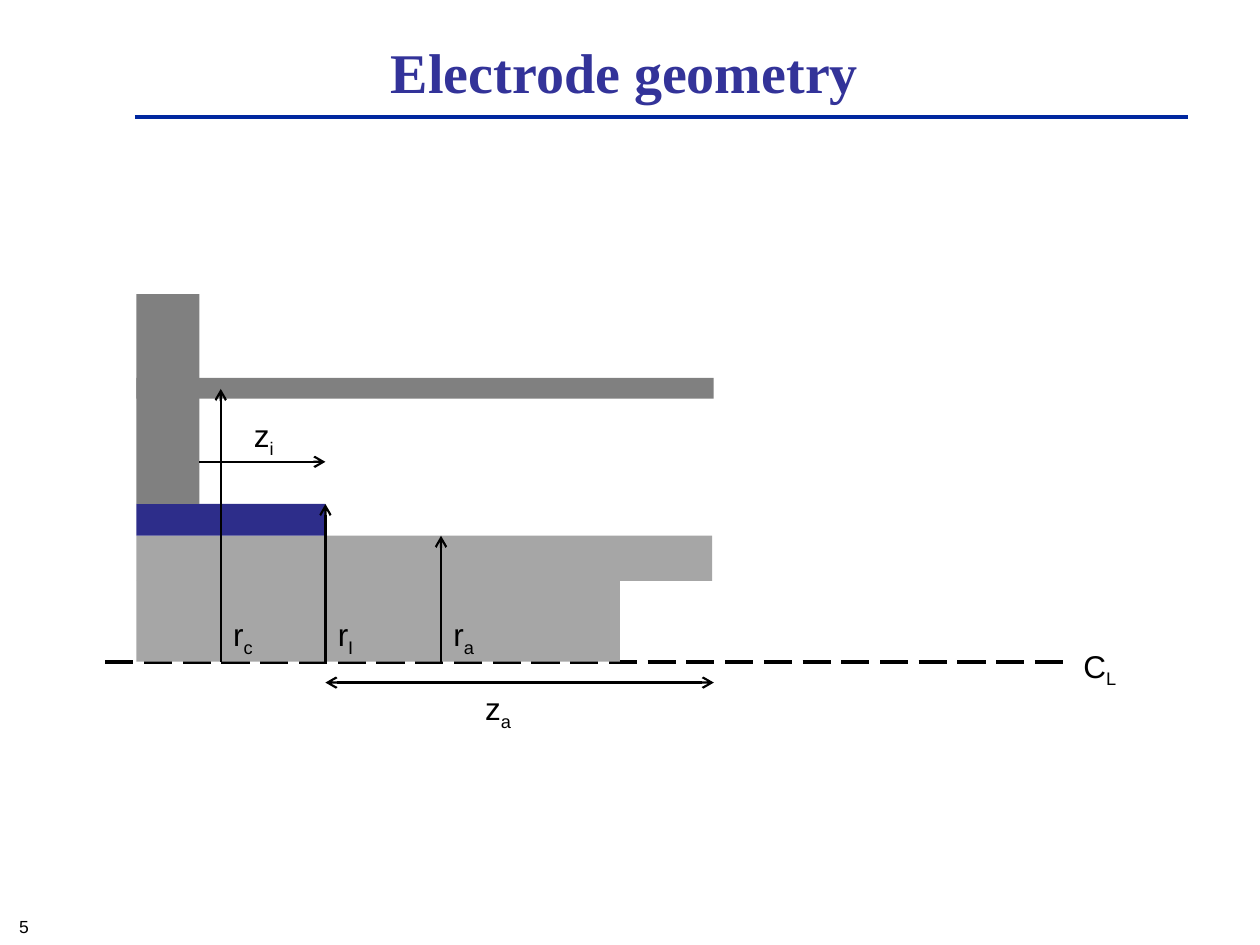
from lxml.etree import SubElement
from pptx import Presentation
from pptx.dml.color import RGBColor
from pptx.enum.dml import MSO_LINE
from pptx.enum.shapes import MSO_CONNECTOR, MSO_SHAPE
from pptx.enum.text import MSO_ANCHOR, MSO_AUTO_SIZE, PP_ALIGN
from pptx.oxml.ns import qn
from pptx.util import Cm, Pt

COLORS = {
    "ink": "000000",
    "title": "333399",
    "rule": "00279F",
    "anode": "A6A6A6",
    "insulator": "2D2D8A",
    "cathode": "808080",
}

deck = Presentation()
deck.slide_width = Cm(25.4)
deck.slide_height = Cm(19.05)
slide = deck.slides.add_slide(deck.slide_layouts[6])


def add_text(text, left, top, width, height, sub="", size=18, font="Arial",
             color="ink", bold=False, align=PP_ALIGN.LEFT,
             anchor=MSO_ANCHOR.TOP, fit=MSO_AUTO_SIZE.NONE):
    box = slide.shapes.add_textbox(Cm(left), Cm(top), Cm(width), Cm(height))
    frame = box.text_frame
    frame.word_wrap = True
    frame.auto_size = fit
    frame.vertical_anchor = anchor
    paragraph = frame.paragraphs[0]
    paragraph.alignment = align
    for part in filter(None, (text, sub)):
        run = paragraph.add_run()
        run.text = part
        run.font.size = Pt(size)
        run.font.name = font
        run.font.bold = bold
        run.font.color.rgb = RGBColor.from_string(COLORS[color])
    if sub:
        run._r.get_or_add_rPr().set("baseline", "-25000")


def add_line(x1, y1, x2, y2, width=1.25, color="ink", dash=None, ends=()):
    line = slide.shapes.add_connector(
        MSO_CONNECTOR.STRAIGHT, Cm(x1), Cm(y1), Cm(x2), Cm(y2))
    line.line.width = Pt(width)
    line.line.color.rgb = RGBColor.from_string(COLORS[color])
    if dash:
        line.line.dash_style = dash
    properties = line._element.spPr
    for end in ends:
        SubElement(properties.find(qn("a:ln")), qn(f"a:{end}"), type="arrow")
    SubElement(properties, qn("a:effectLst"))


wall = 2.75
axis = 13.34
insulator_end = 6.56
insulator_top = 10.16
anode_top = 10.8
anode_step = 11.71
anode_end = 14.39

add_text("5", -0.64, 18.34, 1.47, 1.27, size=10, align=PP_ALIGN.RIGHT)
add_line(2.72, 2.36, 23.95, 2.36, width=2, color="rule")
add_text("Electrode geometry", 2.97, 0.76, 19.25, 1.35, size=32,
         font="Times New Roman", color="title", bold=True,
         align=PP_ALIGN.CENTER, anchor=MSO_ANCHOR.MIDDLE)

add_line(2.12, axis, 21.59, axis, width=2, dash=MSO_LINE.LONG_DASH)

for top, right, bottom, color in [
    (anode_step, 12.5, axis, "anode"),
    (anode_top, 14.36, anode_step, "anode"),
    (insulator_top, insulator_end, anode_top, "insulator"),
    (5.93, 4.02, insulator_top, "cathode"),
    (7.62, anode_end, 8.04, "cathode"),
]:
    block = slide.shapes.add_shape(
        MSO_SHAPE.RECTANGLE, Cm(wall), Cm(top), Cm(right - wall), Cm(bottom - top))
    block.shadow.inherit = False
    block.fill.solid()
    block.fill.fore_color.rgb = RGBColor.from_string(COLORS[color])
    block.line.fill.background()

for x, tip in [(8.89, anode_top), (insulator_end, insulator_top), (4.45, 7.84)]:
    add_line(x, axis, x, tip, ends=["tailEnd"])
add_line(4.02, 9.31, insulator_end, 9.31, ends=["tailEnd"])
add_line(insulator_end, 13.76, anode_end, 13.76, ends=["headEnd", "tailEnd"])

for symbol, sub, left, top in [
    ("C", "L", 21.59, 12.91),
    ("r", "a", 8.89, 12.28),
    ("r", "I", insulator_end, 12.28),
    ("r", "c", 4.45, 12.28),
    ("z", "i", 4.87, 8.26),
    ("z", "a", 9.53, 13.76),
]:
    add_text(symbol, left, top, 1.48, 1.02, sub=sub,
             fit=MSO_AUTO_SIZE.SHAPE_TO_FIT_TEXT)

deck.save("out.pptx")
